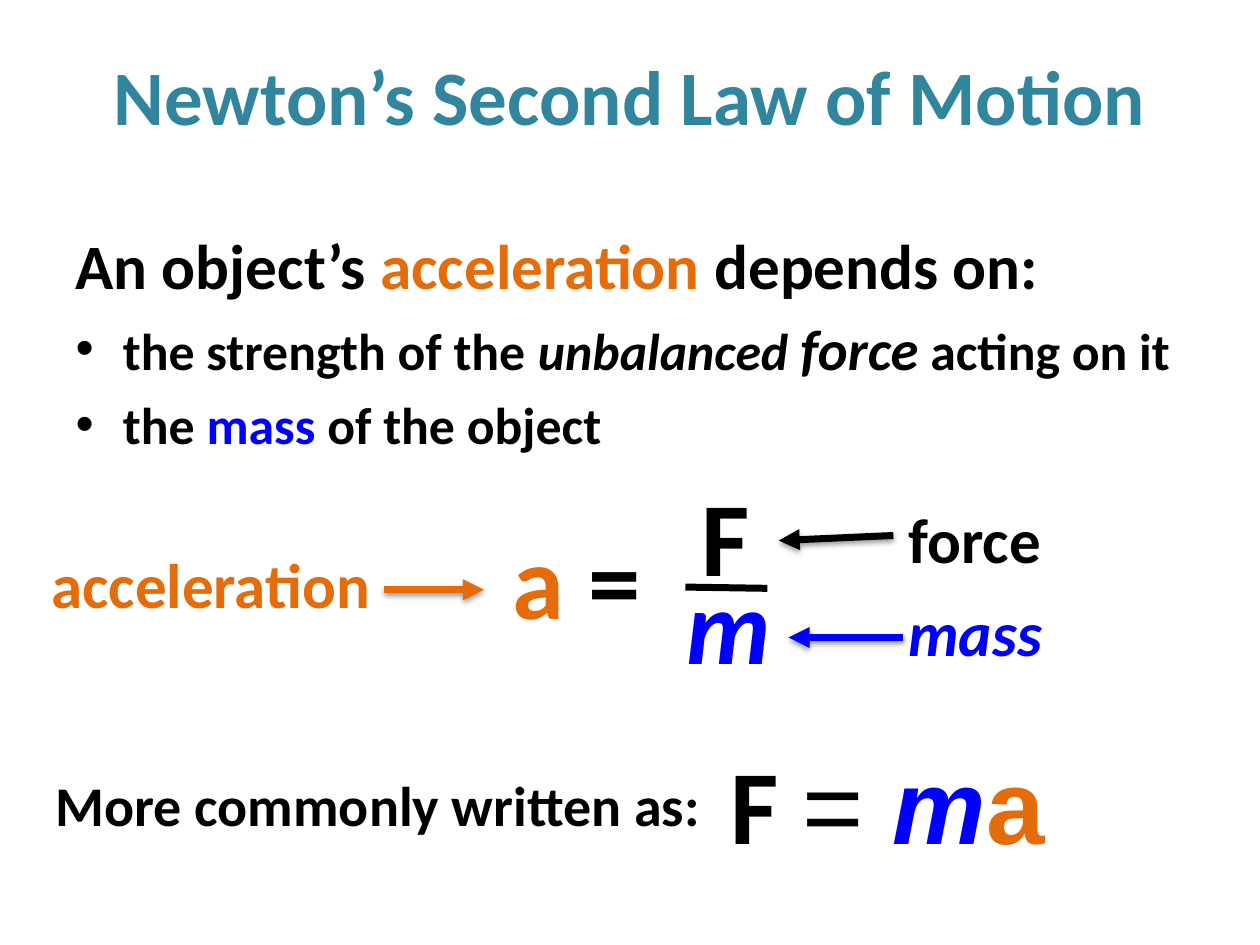
from lxml.etree import SubElement
from pptx import Presentation
from pptx.dml.color import RGBColor
from pptx.enum.shapes import MSO_CONNECTOR
from pptx.enum.text import MSO_ANCHOR, MSO_AUTO_SIZE, PP_ALIGN
from pptx.oxml.ns import qn
from pptx.util import Pt

BLACK = RGBColor(0x00, 0x00, 0x00)
TEAL = RGBColor(0x31, 0x85, 0x9C)
ORANGE = RGBColor(0xE4, 0x6C, 0x0A)
BLUE = RGBColor(0x00, 0x00, 0xFF)

LABEL, FORMULA = 36, 60


def add_span(para, text, size=LABEL, color=BLACK, bold=True, italic=False, font="Calibri"):
    """Append one formatted run to a paragraph."""
    span = para.add_run()
    span.text = text
    span.font.name = font
    span.font.size = Pt(size)
    span.font.bold = bold
    span.font.italic = italic
    span.font.color.rgb = color


class LawSlide:
    """Holds the page, the current group and the style of its parts."""

    line_width = 4

    def __init__(self, deck):
        self.page = deck.slides.add_slide(deck.slide_layouts[1])
        self.shapes = self.page.shapes

    def start_group(self):
        self.shapes = self.page.shapes.add_group_shape().shapes

    def end_group(self):
        self.shapes = self.page.shapes

    def place(self, box, left, top, width, height):
        box.left, box.top, box.width, box.height = map(Pt, (left, top, width, height))
        box.text_frame.auto_size = MSO_AUTO_SIZE.NONE

    def title(self, text, *frame):
        box = self.page.shapes.title
        self.place(box, *frame)
        box.text_frame.vertical_anchor = MSO_ANCHOR.MIDDLE
        para = box.text_frame.paragraphs[0]
        para.alignment = PP_ALIGN.CENTER
        add_span(para, text, size=44, color=TEAL)

    def body(self, paragraphs, *frame):
        """Fill the body: an unbulleted lead line, then bulleted lines."""
        box = self.page.placeholders[1]
        self.place(box, *frame)
        for number, spans in enumerate(paragraphs):
            if number:
                para = box.text_frame.add_paragraph()
            else:
                para = box.text_frame.paragraphs[0]
                properties = para._p.get_or_add_pPr()
                properties.set("marL", str(Pt(27)))
                properties.set("indent", str(-Pt(27)))
                SubElement(properties, qn("a:buNone"))
            for text, style in spans:
                add_span(para, text, **style)

    def text(self, spans, left, top, width, height, align=None, wrap=True):
        box = self.shapes.add_textbox(Pt(left), Pt(top), Pt(width), Pt(height))
        box.text_frame.word_wrap = wrap
        box.text_frame.auto_size = MSO_AUTO_SIZE.SHAPE_TO_FIT_TEXT
        para = box.text_frame.paragraphs[0]
        para.alignment = align
        for text, style in spans:
            add_span(para, text, **style)

    def line(self, *ends, color=BLACK, arrow=False):
        """Draw a plain line, or a shadowed arrow pointing at its end."""
        line = self.shapes.add_connector(MSO_CONNECTOR.STRAIGHT, *map(Pt, ends))
        line.line.width = Pt(self.line_width)
        line.line.color.rgb = color
        if arrow:
            SubElement(line.line._get_or_add_ln(), qn("a:tailEnd"), type="triangle")
        effects = SubElement(line._element.spPr, qn("a:effectLst"))
        if arrow:
            shadow = SubElement(effects, qn("a:outerShdw"), blurRad="40000", dist="20000",
                                dir="5400000", rotWithShape="0")
            shade = SubElement(shadow, qn("a:srgbClr"), val=str(BLACK))
            SubElement(shade, qn("a:alpha"), val="38000")

    def label(self, text, frame, ends, **style):
        """Group a word with the arrow to its symbol."""
        self.start_group()
        self.text([(text, style)], *frame)
        self.line(*ends, color=style.get("color", BLACK), arrow=True)
        self.end_group()


def main():
    deck = Presentation()
    deck.slide_width, deck.slide_height = Pt(720), Pt(540)
    slide = LawSlide(deck)

    # Title and statement of the law
    slide.title("Newton’s Second Law of Motion", 36, 21.6, 648, 65.5)
    lead, item = {"size": 36.1}, {"size": 29.6}
    slide.body([
        [("An object’s ", lead), ("acceleration ", lead | {"color": ORANGE}),
         ("depends on:", lead)],
        [("the strength of the ", item), ("unbalanced ", item | {"italic": True}),
         ("force", {"size": 32.4, "italic": True}), (" acting on it", item)],
        [("the ", item), ("mass ", item | {"color": BLUE}), ("of the object", item)],
    ], 36, 126, 648, 151.2)

    # Formula a = F / m
    big = {"size": FORMULA}
    big_a = big | {"color": ORANGE}
    big_m = big | {"color": BLUE, "italic": True}
    slide.start_group()
    slide.text([("a ", big_a), ("=", big)], 285.8, 290.2, 100, 80)
    slide.text([("F", big)], 388, 265.7, 53.3, 80, align=PP_ALIGN.CENTER)
    slide.text([("m", big_m)], 385.2, 316, 73.4, 80)
    slide.line(391.7, 335.5, 438.5, 336.2)
    slide.end_group()

    # Names of the symbols
    slide.label("force", (512, 282.2, 154.8, 51), (510.5, 306, 445, 308.9))
    slide.label("mass", (512, 335.5, 154.8, 51), (516.2, 364.3, 450.7, 364.3),
                color=BLUE, italic=True)
    slide.label("acceleration", (22.3, 308.2, 208, 51), (219.6, 337, 276.5, 337),
                color=ORANGE)

    # Common form F = ma
    arial = {"font": "Arial"}
    slide.text([("F ", big), ("= ", big | arial | {"bold": False}),
                ("m", big_m | arial), ("a", big_a | arial)], 410.4, 419, 285.8, 80)
    slide.text([("More commonly written as:", {"size": 32})], 24.5, 437, 387.4, 46, wrap=False)

    deck.save("out.pptx")


if __name__ == "__main__":
    main()
